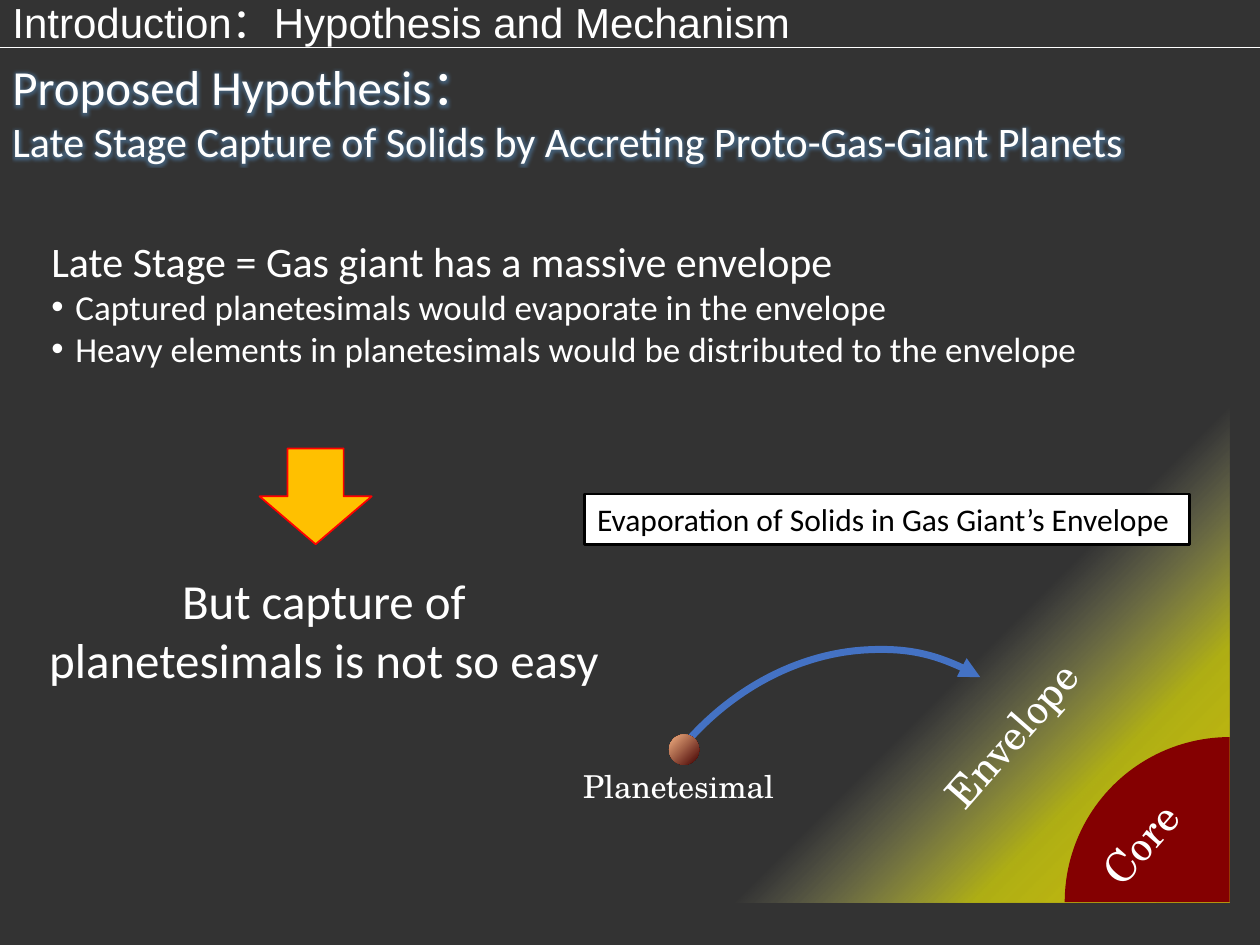
from lxml import etree
from pptx import Presentation
from pptx import util as u
from pptx.dml.color import RGBColor
from pptx.enum import shapes, text
from pptx.oxml import parse_xml
from pptx.oxml.ns import nsdecls, qn

WHITE, BLACK, CORE_RED = "FFFFFF", "000000", "840001"
SCHOLA = "TeX Gyre Schola"

# Each box: place, then paragraphs of (text, size, bulleted), then options
TEXTS = [
    ((0, 0.02, 8.62, 0.36), [("Introduction：Hypothesis and Mechanism", 24, False)],
     dict(font="Arial", anchor=text.MSO_ANCHOR.MIDDLE, spacing=0.9)),
    ((0, 0.4, 10, 0.98),
     [("Proposed Hypothesis：", 28, False),
      ("Late Stage Capture of Solids by Accreting Proto-Gas-Giant Planets", 24, False)],
     dict(glow="5B9BD5")),
    ((0.31, 1.82, 8.94, 1.18),
     [("Late Stage = Gas giant has a massive envelope", 24, False),
      ("Captured planetesimals would evaporate in the envelope", 20, True),
      ("Heavy elements in planetesimals would be distributed to the envelope", 20, True)], {}),
    ((0.24, 4.48, 4.66, 1.04),
     [("But capture of planetesimals is not so easy", 28, False)],
     dict(align=text.PP_ALIGN.CENTER)),
    ((8.6, 6.29, 1.24, 0.67), [("Core", 24, False)],
     dict(font=SCHOLA, rotation=311.2, wrap=False)),
    ((7.19, 5.33, 2.18, 0.67), [("Envelope", 24, False)],
     dict(font=SCHOLA, rotation=311.2, wrap=False)),
    ((4.53, 6.04, 1.73, 0.4), [("Planetesimal", 18, False)],
     dict(font=SCHOLA, wrap=False)),
]
CAPTION = "Evaporation of Solids in Gas Giant’s Envelope"

# Gradient stops: position %, colour, opacity %
ENVELOPE_STOPS = [(0, CORE_RED, 100), (34, "FFC000", 100), (63, "FFFF00", 60),
                  (75, "FFFFC0", 0), (100, WHITE, 0)]
PLANETESIMAL_STOPS = [(0, "F4B183", 100), (100, "420000", 100)]
PLANET_CENTRE = (9.76, 7.16)
ENVELOPE_RADIUS, CORE_RADIUS = 3.94, 1.31
QUADRANT = (107.978, 162)  # pie angles, 180 to 270 degrees


def rgb(value):
    return RGBColor.from_string(value)


def inches(values):
    return [u.Inches(value) for value in values]


def add_bullet(para):
    properties = para._p.get_or_add_pPr()
    properties.set("marL", str(u.Inches(0.19)))
    properties.set("indent", str(-u.Inches(0.19)))
    etree.SubElement(properties, qn("a:buFont")).set("typeface", "Arial")
    etree.SubElement(properties, qn("a:buChar")).set("char", "•")


def add_glow(span, color):
    glow = parse_xml(
        f'<a:effectLst {nsdecls("a")}><a:glow rad="63500"><a:srgbClr val="{color}">'
        '<a:alpha val="40000"/></a:srgbClr></a:glow></a:effectLst>')
    span.font._element.find(qn("a:solidFill")).addnext(glow)


def write(box, paragraphs, font="Calibri", color=WHITE, anchor=text.MSO_ANCHOR.TOP,
          align=text.PP_ALIGN.LEFT, spacing=None, wrap=True, glow=None):
    frame = box.text_frame
    frame.text = "\n".join(words for words, _, _ in paragraphs)
    frame.word_wrap = wrap
    frame.auto_size = (text.MSO_AUTO_SIZE.NONE if anchor == text.MSO_ANCHOR.MIDDLE
                       else text.MSO_AUTO_SIZE.SHAPE_TO_FIT_TEXT)
    frame.vertical_anchor = anchor
    for para, (_, size, bulleted) in zip(frame.paragraphs, paragraphs):
        para.alignment = align
        if spacing:
            para.line_spacing = spacing
        if bulleted:
            add_bullet(para)
        for span in para.runs:
            span.font.name, span.font.size = font, u.Pt(size)
            span.font.color.rgb = rgb(color)
            if glow:
                add_glow(span, glow)


def add_text(slide, place, paragraphs, rotation=0, **style):
    box = slide.shapes.add_textbox(*inches(place))
    box.rotation = rotation
    write(box, paragraphs, **style)


def add_shape(slide, kind, place, fill=None, line=None, width=1, adjust=()):
    shape = slide.shapes.add_shape(kind, *inches(place))
    shape.shadow.inherit = False
    for index, value in enumerate(adjust):
        shape.adjustments[index] = value
    if fill:
        shape.fill.solid()
        shape.fill.fore_color.rgb = rgb(fill)
    else:
        shape.fill.background()
    if line:
        shape.line.color.rgb = rgb(line)
        shape.line.width = u.Pt(width)
    else:
        shape.line.fill.background()
    return shape


def add_quadrant(slide, radius, fill=None):
    """Upper-left quarter of a disc around the planet's centre."""
    x, y = PLANET_CENTRE
    place = (x - radius, y - radius, 2 * radius, 2 * radius)
    return add_shape(slide, shapes.MSO_SHAPE.PIE, place, fill, adjust=QUADRANT)


def fill_radial(shape, stops, focus):
    """Circular gradient; focus names the two sides set to 100 %."""
    marks = "".join(
        f'<a:gs pos="{position * 1000}"><a:srgbClr val="{color}">'
        f'<a:alpha val="{opacity * 1000}"/></a:srgbClr></a:gs>'
        for position, color, opacity in stops)
    sides = " ".join(f'{side}="100000"' for side in focus)
    gradient = parse_xml(
        f'<a:gradFill {nsdecls("a")} rotWithShape="1"><a:gsLst>{marks}</a:gsLst>'
        f'<a:path path="circle"><a:fillToRect {sides}/></a:path></a:gradFill>')
    properties = shape._element.spPr
    properties.replace(properties.find(qn("a:noFill")), gradient)


def main():
    deck = Presentation()
    deck.slide_width, deck.slide_height = inches((10, 7.5))
    slide = deck.slides.add_slide(deck.slide_layouts[6])
    slide.background.fill.solid()
    slide.background.fill.fore_color.rgb = rgb("333333")

    rule = slide.shapes.add_connector(shapes.MSO_CONNECTOR.STRAIGHT,
                                      *inches((0, 0.38, 10, 0.38)))
    rule.line.color.rgb, rule.line.width = rgb(WHITE), u.Pt(0.5)
    etree.SubElement(rule._element.spPr, qn("a:effectLst"))

    envelope = add_quadrant(slide, ENVELOPE_RADIUS)
    fill_radial(envelope, ENVELOPE_STOPS, "lt")
    add_quadrant(slide, CORE_RADIUS, CORE_RED)

    caption = add_shape(slide, shapes.MSO_SHAPE.RECTANGLE, (4.64, 3.92, 4.8, 0.4),
                        WHITE, BLACK, 1.5)
    write(caption, [(CAPTION, 18, False)], color=BLACK, wrap=False)

    path_arc = add_shape(slide, shapes.MSO_SHAPE.ARC, (4.64, 5.38, 4.15, 3.55),
                         line="4472C4", width=4, adjust=(170.731, 0))
    path_arc.rotation = 300.9
    etree.SubElement(path_arc.line._get_or_add_ln(), qn("a:tailEnd")).set("type", "triangle")
    planetesimal = add_shape(slide, shapes.MSO_SHAPE.OVAL, (5.31, 5.83, 0.24, 0.24))
    fill_radial(planetesimal, PLANETESIMAL_STOPS, "rb")

    add_shape(slide, shapes.MSO_SHAPE.DOWN_ARROW, (2.06, 3.56, 0.89, 0.76),
              "FFC000", "FF0000")
    for place, paragraphs, style in TEXTS:
        add_text(slide, place, paragraphs, **style)
    deck.save("out.pptx")


if __name__ == "__main__":
    main()
